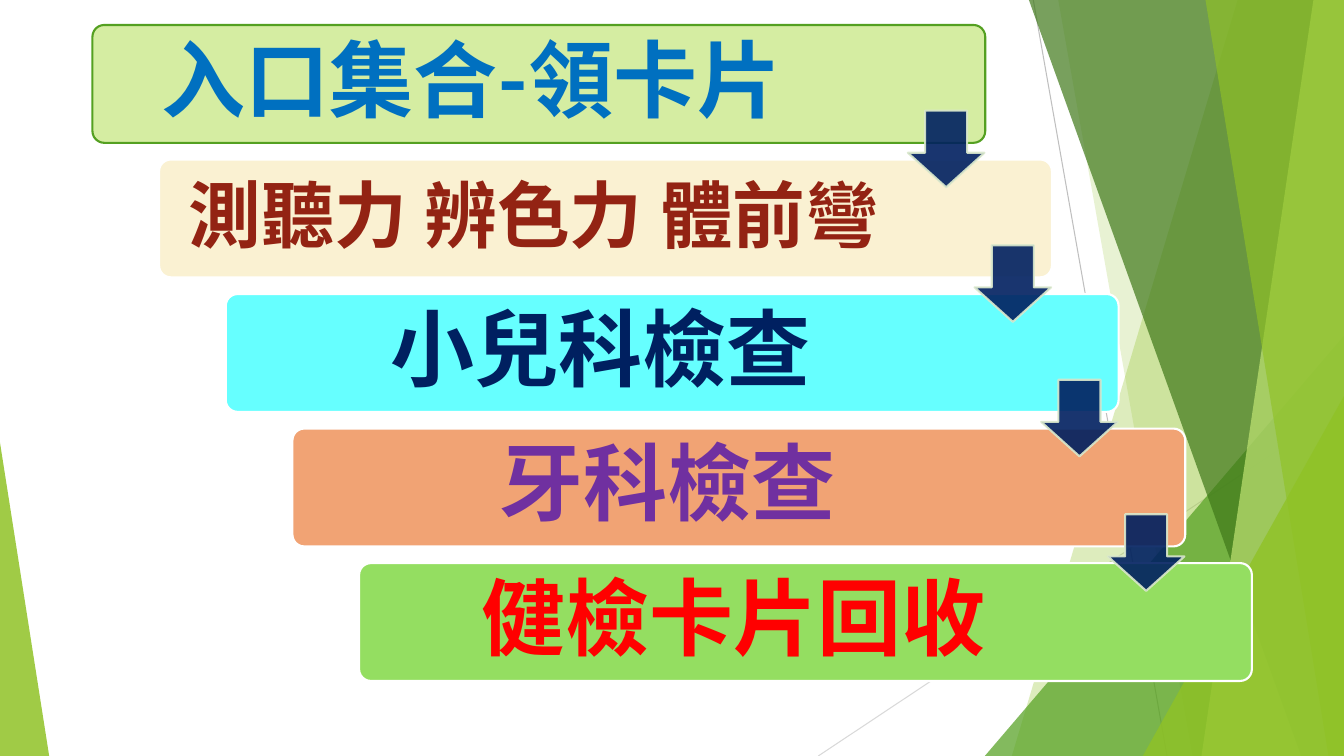
import pptx
import pptx.util
import pptx.dml.color
import pptx.enum.shapes
import pptx.enum.text
import pptx.oxml
import pptx.oxml.ns
import lxml.etree

Cm = pptx.util.Cm
Pt = pptx.util.Pt
PRESETS = pptx.enum.shapes.MSO_SHAPE

# Content: text, bar, outline, text colour, font, size, text width, inset
STEPS = [
    ("入口集合-領卡片", "pale_green", "green", "blue", "Lato", 60, 18.92, 0.64),
    ("測聽力 辨色力 體前彎", "cream", "white", "brown", "DejaVu Sans Mono", 52, 18.7, 0.56),
    ("小兒科檢查", "cyan", "white", "navy", "Lato", 60, 18.7, 0.64),
    ("牙科檢查", "orange", "white", "purple", "Lato", 60, 18.7, 0.64),
    ("健檢卡片回收", "light_green", "white", "red", "Lato", 60, 18.7, 0.64),
]
EAST_ASIAN_FONT = "Lato"
COLORS = {
    "pale_green": "D5EDA2", "cream": "FAF1D2", "cyan": "66FFFF", "orange": "F1A374",
    "light_green": "94DE61", "white": "FFFFFF", "green": "54A021", "blue": "0070C0",
    "brown": "932313", "navy": "002060", "purple": "7030A0", "red": "FF0000",
    "lime": "90C226", "forest": "3F7819", "yellow_green": "C0E474",
    "arrow_edge": "DBE9CD", "gray": "BFBFBF", "light_gray": "D9D9D9",
}

# Layout in centimetres
WIDTH, HEIGHT = 33.87, 19.05
STEP_X, STEP_Y = 1.68, 3.39
BAR = (2.33, 0.63, 22.5, 2.97)
ARROW = (22.88, 2.79, 1.93, 1.93)
TEXT_OFFSET, TEXT_HEIGHT = 0.09, 2.79

# Background: bands run from top x to bottom x and fill to the right edge;
# triangles have left, top, width and apex position, and stand on the bottom edge
RULES = [("gray", 26.04, 0, 29.41, HEIGHT), ("light_gray", WIDTH, 10.24, 20.62, HEIGHT)]
FACETS = [
    ("band", "lime", 30, (31.19, 25.5)),
    ("band", "lime", 20, (26.67, 30.05)),
    ("triangle", "green", 72, (24.82, 8.46, 9.05, 1)),
    ("band", "forest", 70, (25.93, 32.79)),
    ("band", "yellow_green", 70, (33.1, 30.28)),
    ("band", "lime", 65, (30.38, 33.48)),
    ("triangle", "lime", 80, (28.8, 9.98, 5.07, 1)),
    ("triangle", "lime", 85, (0, 11.15, 1.24, 0)),
]


def rgb(name):
    return pptx.dml.color.RGBColor.from_string(COLORS[name])


def set_alpha(fill_parent, percent):
    color = fill_parent.find(".//" + pptx.oxml.ns.qn("a:srgbClr"))
    alpha = lxml.etree.SubElement(color, pptx.oxml.ns.qn("a:alpha"))
    alpha.set("val", str(percent * 1000))


def style(shape, fill, outline=None, opacity=100):
    shape.shadow.inherit = False
    shape.fill.solid()
    shape.fill.fore_color.rgb = rgb(fill)
    if outline:
        shape.line.color.rgb = rgb(outline)
        shape.line.width = Pt(1.5)
    else:
        shape.line.fill.background()
    if opacity < 100:
        properties = shape._element.spPr
        set_alpha(properties.find(pptx.oxml.ns.qn("a:solidFill")), opacity)
        if outline:
            set_alpha(properties.find(pptx.oxml.ns.qn("a:ln")), opacity)


def add_preset(slide, preset, box, adjustments):
    shape = slide.shapes.add_shape(preset, *map(Cm, box))
    for index, value in enumerate(adjustments):
        shape.adjustments[index] = value
    return shape


def add_rule(slide, color, *ends):
    line = slide.shapes.add_connector(
        pptx.enum.shapes.MSO_CONNECTOR.STRAIGHT, *map(Cm, ends))
    line.line.color.rgb = rgb(color)
    line.line.width = Pt(0.75)
    lxml.etree.SubElement(line._element.spPr, pptx.oxml.ns.qn("a:effectLst"))


def add_facet(slide, kind, color, opacity, geometry):
    if kind == "band":
        top_x, bottom_x = geometry
        builder = slide.shapes.build_freeform(Cm(top_x), 0)
        corners = [(WIDTH, 0), (WIDTH, HEIGHT), (bottom_x, HEIGHT)]
        builder.add_line_segments([(Cm(x), Cm(y)) for x, y in corners], close=True)
        shape = builder.convert_to_shape()
    else:
        left, top, width, apex = geometry
        shape = add_preset(slide, PRESETS.ISOSCELES_TRIANGLE,
                           (left, top, width, HEIGHT - top), [apex])
    style(shape, color, opacity=opacity)


def add_label(slide, text, box, color, font, size, inset):
    frame = slide.shapes.add_textbox(*map(Cm, box)).text_frame
    frame_format = {"word_wrap": True, "vertical_anchor": pptx.enum.text.MSO_ANCHOR.MIDDLE}
    for side in ("left", "right", "top", "bottom"):
        frame_format["margin_" + side] = Cm(inset)
    for name, value in frame_format.items():
        setattr(frame, name, value)
    paragraph = frame.paragraphs[0]
    paragraph.alignment = pptx.enum.text.PP_ALIGN.CENTER
    paragraph.line_spacing = 0.9
    run = paragraph.add_run()
    run.text = text
    for name, value in {"name": font, "size": Pt(size), "bold": True}.items():
        setattr(run.font, name, value)
    run.font.color.rgb = rgb(color)
    # The spaces between Chinese words take their width from this font
    east_asian = lxml.etree.SubElement(run.font._element, pptx.oxml.ns.qn("a:ea"))
    east_asian.set("typeface", EAST_ASIAN_FONT)


def shifted(box, index):
    left, top, width, height = box
    return left + index * STEP_X, top + index * STEP_Y, width, height


def main():
    presentation = pptx.Presentation()
    presentation.slide_width = Cm(WIDTH)
    presentation.slide_height = Cm(HEIGHT)
    slide = presentation.slides.add_slide(presentation.slide_layouts[6])

    # Faceted background
    for rule in RULES:
        add_rule(slide, *rule)
    for facet in FACETS:
        add_facet(slide, *facet)

    # Staircase of bars with their labels
    for index, (text, fill, outline, color, font, size, width, inset) in enumerate(STEPS):
        bar = shifted(BAR, index)
        style(add_preset(slide, PRESETS.ROUNDED_RECTANGLE, bar, [0.1]), fill, outline)
        label = (bar[0] + TEXT_OFFSET, bar[1] + TEXT_OFFSET, width, TEXT_HEIGHT)
        add_label(slide, text, label, color, font, size, inset)

    # Arrows between consecutive bars; adjustments are shaft width, head length
    for index in range(len(STEPS) - 1):
        arrow = add_preset(slide, PRESETS.DOWN_ARROW, shifted(ARROW, index), [0.55, 0.45])
        style(arrow, "navy", "arrow_edge", 90)

    presentation.save("out.pptx")


if __name__ == "__main__":
    main()
